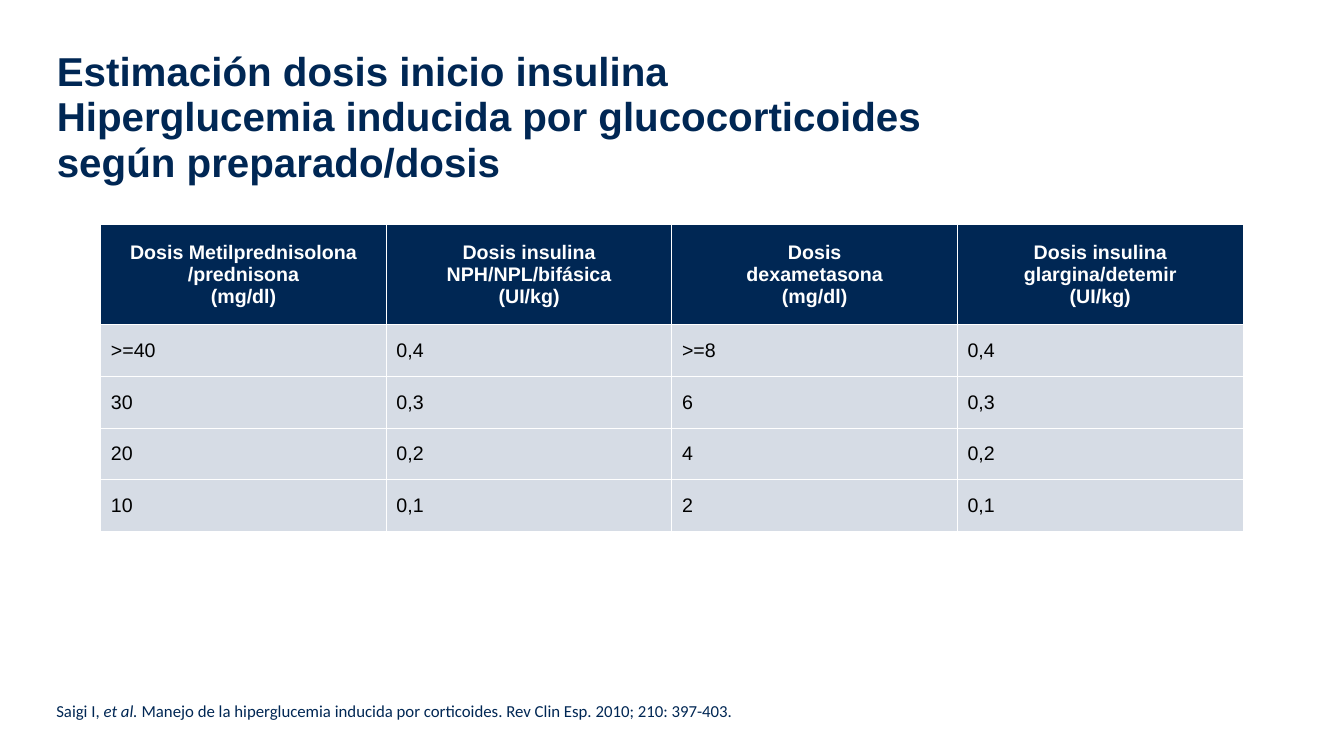
from lxml import etree
from pptx import Presentation
from pptx.dml.color import RGBColor
from pptx.enum.text import MSO_ANCHOR, PP_ALIGN
from pptx.oxml.ns import qn
from pptx.util import Pt

TOP, MIDDLE, BOTTOM = MSO_ANCHOR.TOP, MSO_ANCHOR.MIDDLE, MSO_ANCHOR.BOTTOM
LEFT, CENTER = PP_ALIGN.LEFT, PP_ALIGN.CENTER
COLOURS = {"navy": "002754", "white": "FFFFFF", "black": "000000", "pale": "D6DCE5"}
TITLE = ("Estimación dosis inicio insulina Hiperglucemia inducida por "
         "glucocorticoides según preparado/dosis")
HEADERS = [
    "Dosis Metilprednisolona\n/prednisona\n(mg/dl)",
    "Dosis insulina NPH/NPL/bifásica\n(UI/kg)",
    "Dosis\ndexametasona\n(mg/dl)",
    "Dosis insulina glargina/detemir\n(UI/kg)",
]
DOSES = [
    [">=40", "0,4", ">=8", "0,4"],
    ["30", "0,3", "6", "0,3"],
    ["20", "0,2", "4", "0,2"],
    ["10", "0,1", "2", "0,1"],
]
CITATION = [
    ("Saigi I, ", False),
    ("et al. ", True),
    ("Manejo de la hiperglucemia inducida por corticoides. "
     "Rev Clin Esp. 2010; 210: 397-403.", False),
]


def colour(name):
    """Return the named colour."""
    return RGBColor.from_string(COLOURS[name])


def add_span(para, text, size, font, ink, bold=False, italic=False):
    """Add one formatted run to a paragraph."""
    span = para.add_run()
    span.text = text
    span.font.size = Pt(size)
    span.font.name = font
    span.font.bold = bold
    span.font.italic = italic
    span.font.color.rgb = colour(ink)


def place_title(page, left, top, width, height):
    """Move the title placeholder into the box and fill it."""
    title = page.shapes.title
    title.left, title.top, title.width, title.height = map(Pt, (left, top, width, height))
    frame = title.text_frame
    frame.word_wrap = True
    frame.vertical_anchor = TOP
    para = frame.paragraphs[0]
    para.alignment = LEFT
    para.line_spacing = 0.94
    add_span(para, TITLE, 28.8, "Arial", "navy", bold=True)


def add_borders(cell):
    """Draw thin white lines on all four sides of a cell."""
    properties = cell._tc.get_or_add_tcPr()
    for position, side in enumerate(("a:lnL", "a:lnR", "a:lnT", "a:lnB")):
        line = etree.Element(qn(side), w=str(Pt(0.75)))
        fill = etree.SubElement(line, qn("a:solidFill"))
        etree.SubElement(fill, qn("a:srgbClr"), val=COLOURS["white"])
        properties.insert(position, line)


def fill_cell(cell, text, is_header):
    """Write and format one table cell."""
    cell.fill.solid()
    cell.fill.fore_color.rgb = colour("navy" if is_header else "pale")
    cell.vertical_anchor = MIDDLE
    add_borders(cell)
    para = cell.text_frame.paragraphs[0]
    para.alignment = CENTER if is_header else LEFT
    for index, line in enumerate(text.split("\n")):
        if index:
            para.add_line_break()
        add_span(para, line, 14, "Arial", "white" if is_header else "black", bold=is_header)


def place_dose_table(page, left, top, width, height, header_height):
    """Add the dose table with equal columns and equal body rows."""
    rows = [HEADERS] + DOSES
    table = page.shapes.add_table(
        len(rows), len(HEADERS), Pt(left), Pt(top), Pt(width), Pt(height)).table
    for column in table.columns:
        column.width = Pt(width / len(HEADERS))
    for row_index, texts in enumerate(rows):
        is_header = row_index == 0
        body_height = (height - header_height) / len(DOSES)
        table.rows[row_index].height = Pt(header_height if is_header else body_height)
        for column_index, text in enumerate(texts):
            fill_cell(table.cell(row_index, column_index), text, is_header)


def place_citation(page, left, top, width, height):
    """Add the source line at the foot of the slide."""
    box = page.shapes.add_textbox(Pt(left), Pt(top), Pt(width), Pt(height))
    frame = box.text_frame
    frame.word_wrap = True
    frame.vertical_anchor = BOTTOM
    para = frame.paragraphs[0]
    for text, italic in CITATION:
        add_span(para, text, 12, "Calibri", "navy", italic=italic)


def main():
    """Build and save the slide."""
    deck = Presentation()
    deck.slide_width, deck.slide_height = Pt(960), Pt(540)
    page = deck.slides.add_slide(deck.slide_layouts[5])
    place_title(page, 33.4, 32, 641, 104)
    place_dose_table(page, 72, 160, 816, 219.6, 72)
    place_citation(page, 33.1, 496.8, 860, 21.8)
    deck.save("out.pptx")


if __name__ == "__main__":
    main()
